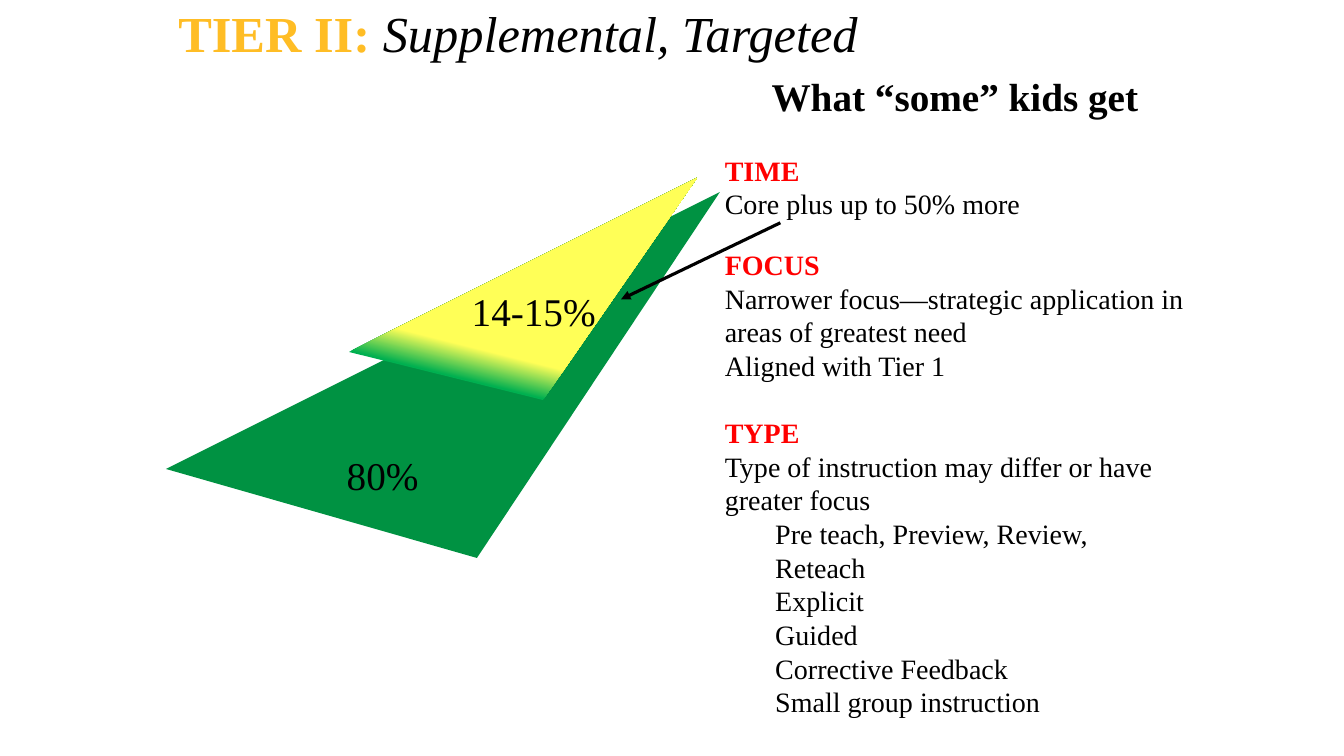
"""Build the Tier II slide: two stacked triangles beside notes on time, focus and type."""
from lxml.etree import SubElement
from pptx import Presentation
from pptx.dml.color import RGBColor
from pptx.enum.shapes import MSO_CONNECTOR
from pptx.enum.text import MSO_ANCHOR, PP_ALIGN
from pptx.oxml.ns import qn
from pptx.util import Inches, Pt

theme = {
    "font": "Times New Roman", "title": 36, "head": 28, "body": 20,
    "black": "000000", "white": "FFFFFF", "gold": "FFBD25", "red": "FF0000",
    "green": "009242", "lime": "00B050", "yellow": "FFFF57",
}
hue = {key: RGBColor.from_string(val) for key, val in theme.items()
       if isinstance(val, str) and len(val) == 6}

deck = Presentation()
deck.slide_width, deck.slide_height = Inches(13.33), Inches(7.5)
slide = deck.slides.add_slide(deck.slide_layouts[6])
shapes = slide.shapes
col, row = deck.slide_width / 100, deck.slide_height / 100


def add_box(left, top, width, height):
    """Add a wrapping text box placed in hundredths of the slide."""
    box = shapes.add_textbox(int(left * col), int(top * row),
                             int(width * col), int(height * row))
    box.text_frame.word_wrap = True
    return box


def style(para, size, tone="black", bold=False, pitch=1.2):
    """Set the line pitch of a paragraph and the font of its runs."""
    para.line_spacing = Pt(size * pitch)
    for run in para.runs:
        font = run.font
        font.name, font.size, font.bold = theme["font"], Pt(size), bold
        font.color.rgb = hue[tone]


title = add_box(12.53, -1.2, 75, 12.13)
title.fill.solid()
title.fill.fore_color.rgb = hue["white"]
title.text_frame.vertical_anchor = MSO_ANCHOR.MIDDLE
line = title.text_frame.paragraphs[0]
for part in ("TIER II: ", "Supplemental, Targeted"):
    line.add_run().text = part
style(line, theme["title"], pitch=1.02)
tier, kind = line.runs
tier.font.bold, tier.font.color.rgb = True, hue["gold"]
kind.font.italic = True

layers = [
    ("green", [(12.35, 62.04), (53.57, 25.4), (35.49, 73.81)]),
    ("yellow", [(25.97, 46.56), (51.86, 23.54), (40.4, 52.91)]),
]
for tone, points in layers:
    first, *rest = [(x * col, y * row) for x, y in points]
    path = shapes.build_freeform(*first)
    path.add_line_segments(rest)
    layer = path.convert_to_shape()
    layer.shadow.inherit = False
    layer.line.fill.background()
    if tone == "green":
        layer.fill.solid()
        layer.fill.fore_color.rgb = hue[tone]
    else:
        layer.fill.gradient()
        layer.fill.gradient_angle = 76
        stops = zip(layer.fill.gradient_stops, (0.16, 0.27), ("lime", tone))
        for stop, share, shade in stops:
            stop.position, stop.color.rgb = share, hue[shade]

notes = [
    ("head", "What “some” kids get", 0),
    ("topic", "TIME", 24),
    ("text", "Core plus up to 50% more", 0),
    ("topic", "FOCUS", 19.5),
    ("text", "Narrower focus—strategic application in areas of greatest need", 0),
    ("text", "Aligned with Tier 1", 0),
    ("topic", "TYPE", 24),
    ("text", "Type of instruction may differ or have greater focus", 0),
    ("sub", "Pre teach, Preview, Review, Reteach", 0),
    ("sub", "Explicit", 0),
    ("sub", "Guided", 0),
    ("sub", "Corrective Feedback", 0),
    ("sub", "Small group instruction", 0),
]
frame = add_box(53.19, 8.93, 35.71, 85.6).text_frame
frame.text = "\n".join(text for _, text, _ in notes)
for para, (role, _, gap) in zip(frame.paragraphs, notes):
    style(para, theme["head" if role == "head" else "body"],
          "red" if role == "topic" else "black", role in ("head", "topic"))
    para.space_before = Pt(gap)
    if role == "head":
        para.alignment = PP_ALIGN.CENTER
    if role == "sub":
        para.level = 1
        props = para._p.get_or_add_pPr()
        props.set("marL", str(Inches(0.5)))
        props.set("indent", "0")

arrow = shapes.add_connector(MSO_CONNECTOR.STRAIGHT, int(58.06 * col),
                             int(29.47 * row), int(46.21 * col), int(39.6 * row))
arrow.line.color.rgb, arrow.line.width = hue["black"], Pt(2.25)
SubElement(arrow.line._get_or_add_ln(), qn("a:tailEnd"), type="triangle")
SubElement(arrow._element.spPr, qn("a:effectLst"))

labels = [
    ("80%", (24.45, 59.07, 8.03, 7.6), PP_ALIGN.CENTER),
    ("14-15%", (34.36, 37.33, 11.85, 7.6), PP_ALIGN.LEFT),
]
for text, place, align in labels:
    frame = add_box(*place).text_frame
    frame.text = text
    frame.paragraphs[0].alignment = align
    style(frame.paragraphs[0], theme["head"])

deck.save("out.pptx")
